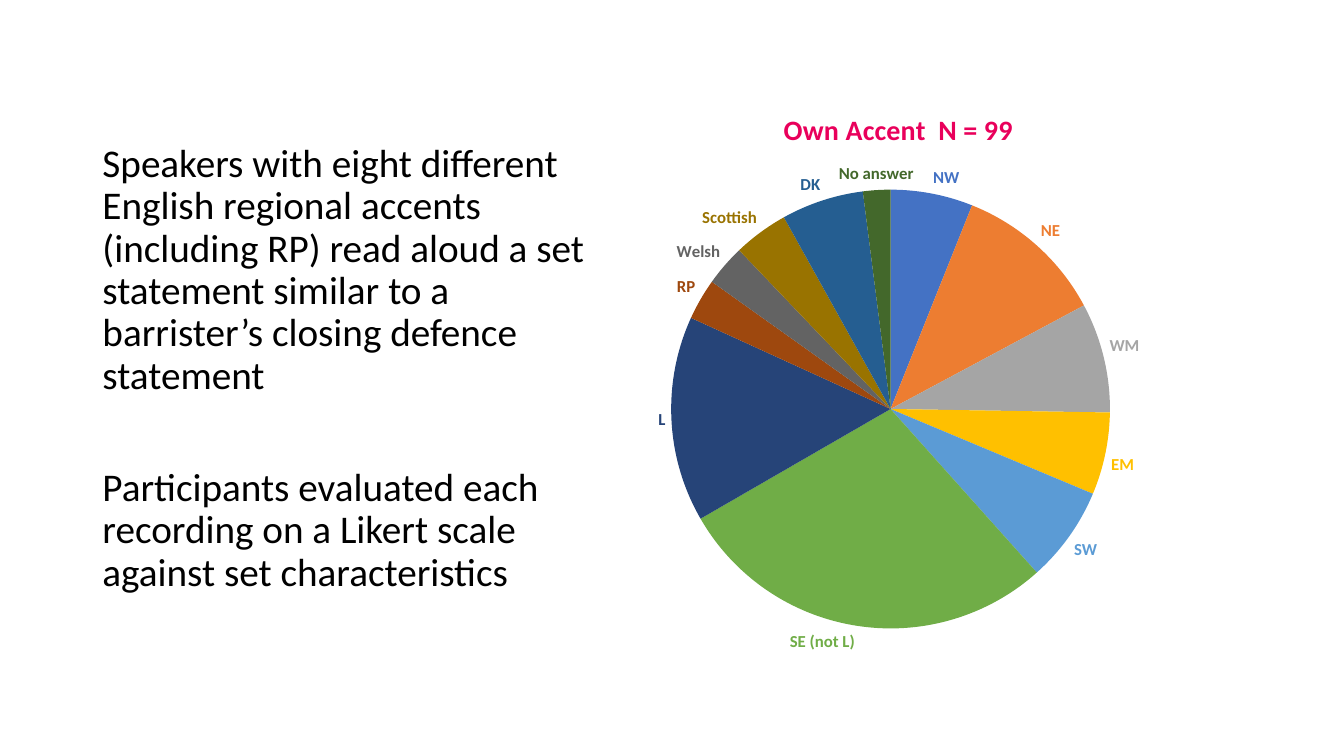
from dataclasses import dataclass

from lxml.etree import SubElement
from pptx import Presentation
from pptx.chart.data import CategoryChartData
from pptx.dml.color import RGBColor
from pptx.enum.chart import XL_CHART_TYPE as ChartType, XL_LABEL_POSITION as LabelPosition
from pptx.enum.text import MSO_ANCHOR as Anchor, MSO_AUTO_SIZE as AutoSize
from pptx.oxml import parse_xml
from pptx.oxml.ns import nsdecls, qn
from pptx.util import Emu, Pt

PX = 9525


@dataclass(frozen=True)
class Theme:
    font: str = "Calibri"
    ink: str = "000000"
    title: str = "E9005B"
    body_size: int = 28
    title_size: int = 20
    label_size: int = 12


THEME = Theme()

STATEMENTS = [
    # text, space before in points
    ("Speakers with eight different English regional accents (including RP) read aloud "
     "a set statement similar to a barrister’s closing defence statement", 10),
    ("Participants evaluated each recording on a Likert scale against set characteristics", 50),
]

ACCENTS = [
    ("NW", 6, "4472C4"),
    ("NE", 11, "ED7D31"),
    ("WM", 8, "A5A5A5"),
    ("EM", 6, "FFC000"),
    ("SW", 7, "5B9BD5"),
    ("SE (not L)", 28, "70AD47"),
    ("L", 15, "264478"),
    ("RP", 3, "9E480E"),
    ("Welsh", 3, "636363"),
    ("Scottish", 4, "997300"),
    ("DK", 6, "255E91"),
    ("No answer", 2, "43682B"),
]


def px(*lengths):
    return [Emu(length * PX) for length in lengths]


def style_font(font, size, color, bold=False):
    font.name = THEME.font
    font.size = Pt(size)
    font.bold = bold
    font.color.rgb = RGBColor.from_string(color)


def manual_layout(x, y, w=None, h=None):
    """Chart layout in fractions of the chart; a size makes it an inner plot layout."""
    inner = '<c:layoutTarget val="inner"/>' if w else ""
    size = f'<c:w val="{w}"/><c:h val="{h}"/>' if w else ""
    return parse_xml(
        f'<c:layout {nsdecls("c")}><c:manualLayout>{inner}'
        f'<c:xMode val="edge"/><c:yMode val="edge"/>'
        f'<c:x val="{x}"/><c:y val="{y}"/>{size}</c:manualLayout></c:layout>')


def fill_statements(body, box):
    body.left, body.top, body.width, body.height = px(*box)
    frame = body.text_frame
    frame.word_wrap = True
    frame.auto_size = AutoSize.NONE
    frame.vertical_anchor = Anchor.TOP
    frame.text = "\n".join(text for text, _ in STATEMENTS)
    for para, (_, space) in zip(frame.paragraphs, STATEMENTS):
        para.line_spacing = 0.9
        para.space_before = Pt(space)
        properties = para._p.get_or_add_pPr()
        properties.set("marL", "0")
        properties.set("indent", "0")
        SubElement(properties, qn("a:buNone"))
        for span in para.runs:
            style_font(span.font, THEME.body_size, THEME.ink)


def add_accent_pie(page, box):
    names, counts, _ = zip(*ACCENTS)
    data = CategoryChartData()
    data.categories = names
    data.add_series("Own Accent", counts)
    chart = page.shapes.add_chart(ChartType.PIE, *px(*box), data).chart
    chart.has_legend = False
    style_font(chart.font, THEME.label_size, THEME.ink)

    chart.has_title = True
    title = chart.chart_title
    title.text_frame.text = "Own Accent  N = 99"
    style_font(title.text_frame.paragraphs[0].runs[0].font,
               THEME.title_size, THEME.title, bold=True)
    title._element.find(qn("c:tx")).addnext(manual_layout(0.37, 0.05))
    for layout in title._element.findall(qn("c:layout"))[1:]:
        title._element.remove(layout)

    plot = chart.plots[0]
    plot.vary_by_categories = True
    plot_area = plot._element.getparent()
    for layout in plot_area.findall(qn("c:layout")):
        plot_area.remove(layout)
    plot_area.insert(0, manual_layout(0.25, 0.19, 0.49, 0.74))
    for index, (_, _, color) in enumerate(ACCENTS):
        color_slice(plot.series[0].points[index], color)


def color_slice(point, color):
    point.format.fill.solid()
    point.format.fill.fore_color.rgb = RGBColor.from_string(color)
    point.format.line.fill.background()
    label = point.data_label
    style_font(label.font, THEME.label_size, color, bold=True)
    label.position = LabelPosition.OUTSIDE_END
    element = label._get_or_add_dLbl()
    element.find(qn("c:showVal")).set("val", "0")
    element.find(qn("c:showCatName")).set("val", "1")


def build_accent_page(deck):
    page = deck.slides.add_slide(deck.slide_layouts.get_by_name("Title and Content"))
    title = page.shapes.title._element
    title.getparent().remove(title)
    fill_statements(page.placeholders[1], (88, 132, 484, 457))
    add_accent_pie(page, (426, 71, 853, 569))


def main():
    deck = Presentation()
    deck.slide_width, deck.slide_height = px(1280, 720)
    build_accent_page(deck)
    deck.save("out.pptx")


if __name__ == "__main__":
    main()
